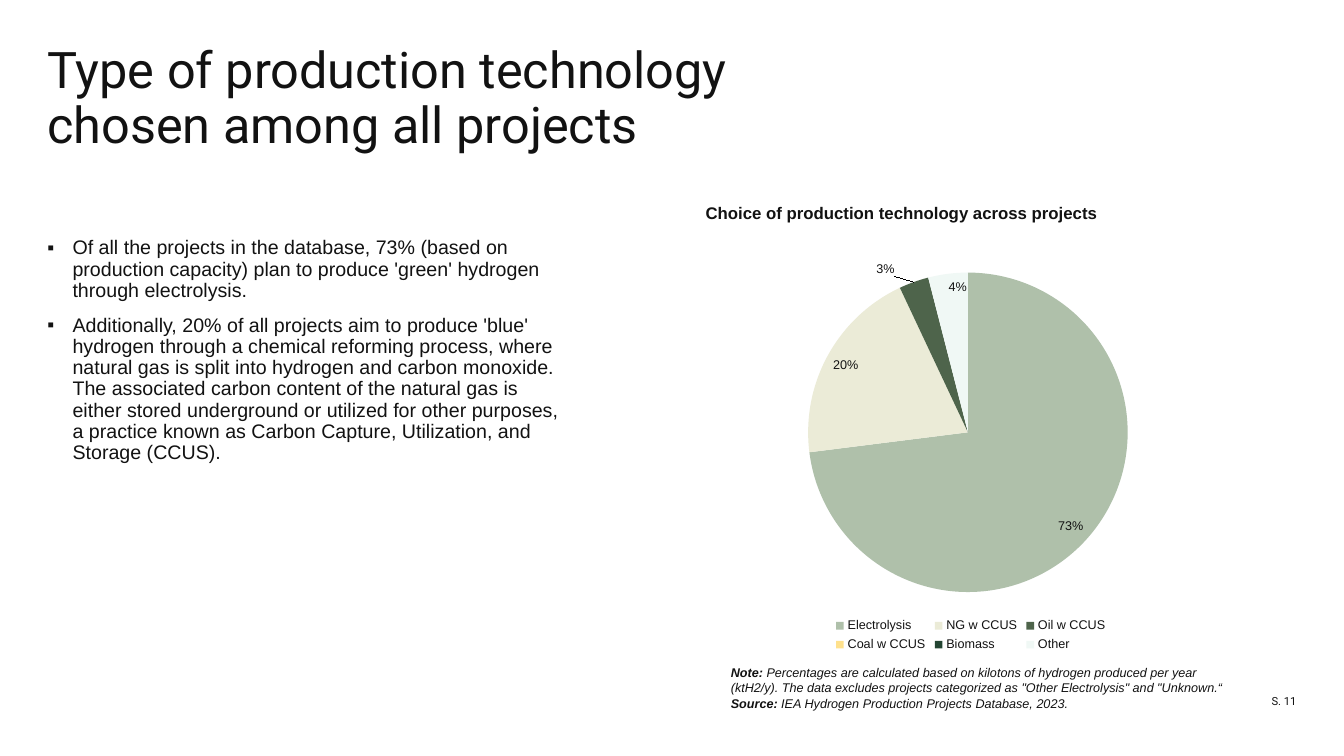
from dataclasses import dataclass

from lxml import etree
from pptx import Presentation
from pptx import util as u
from pptx.chart.data import CategoryChartData
from pptx.dml.color import RGBColor
from pptx.enum import chart as charts, text
from pptx.oxml import ns

INK = "121212"


@dataclass(frozen=True)
class Box:
    left: float
    top: float
    width: float
    height: float

    def lengths(self) -> list:
        return [u.Inches(v) for v in (self.left, self.top, self.width, self.height)]


@dataclass(frozen=True)
class Words:
    content: str
    bold: bool = False
    italic: bool = False


@dataclass(frozen=True)
class Slice:
    name: str
    share: float
    color: str
    position: charts.XL_LABEL_POSITION
    shift: tuple = ()


def rgb(code: str) -> RGBColor:
    return RGBColor.from_string(code)


def style(font, size: float, name: str = "Arial") -> None:
    font.size = u.Pt(size)
    font.name = name
    font.color.rgb = rgb(INK)


def write(paragraph, words: list, size: float, name: str = "Arial") -> None:
    for part in words:
        run = paragraph.add_run()
        run.text = part.content
        style(run.font, size, name)
        run.font.bold = part.bold
        run.font.italic = part.italic


def clear_margins(frame) -> None:
    frame.margin_left = frame.margin_top = frame.margin_right = frame.margin_bottom = 0


def add_text(slide, box: Box, paragraphs: list, size: float, name: str = "Arial"):
    frame = slide.shapes.add_textbox(*box.lengths()).text_frame
    frame.word_wrap = True
    for i, words in enumerate(paragraphs):
        paragraph = frame.add_paragraph() if i else frame.paragraphs[0]
        write(paragraph, words, size, name)
    return frame


def add_bullet(paragraph) -> None:
    props = paragraph._p.get_or_add_pPr()
    props.set("marL", str(u.Inches(0.25)))
    props.set("indent", str(-u.Inches(0.25)))
    font = etree.SubElement(props, ns.qn("a:buFont"))
    font.set("typeface", "Arial")
    etree.SubElement(props, ns.qn("a:buChar")).set("char", "▪")


def manual_layout(values: dict, modes: dict):
    layout = etree.Element(ns.qn("c:layout"))
    manual = etree.SubElement(layout, ns.qn("c:manualLayout"))
    for tag, value in {**modes, **values}.items():
        etree.SubElement(manual, ns.qn(f"c:{tag}")).set("val", str(value))
    return layout


def place(parent, values: dict, modes: dict, after: str = "") -> None:
    for old in parent.findall(ns.qn("c:layout")):
        parent.remove(old)
    layout = manual_layout(values, modes)
    if after:
        parent.find(ns.qn(after)).addnext(layout)
    else:
        parent.insert(0, layout)


def add_pie(slide, box: Box, slices: list) -> None:
    data = CategoryChartData(number_format="0%")
    data.categories = [s.name for s in slices]
    data.add_series("Series 1", [s.share for s in slices])
    pie = slide.shapes.add_chart(charts.XL_CHART_TYPE.PIE, *box.lengths(), data).chart
    pie.has_title = False
    style(pie.font, 10, "Roboto")
    pie.has_legend = True
    pie.legend.position = charts.XL_LEGEND_POSITION.BOTTOM
    pie.legend.include_in_layout = False
    style(pie.legend.font, 9)
    edges = {"xMode": "edge", "yMode": "edge"}
    place(pie.legend._element, {"x": 0.26, "y": 0.9, "w": 0.49, "h": 0.1},
          edges, "c:legendPos")
    place(pie._chartSpace.chart.plotArea, {"x": 0.22, "y": 0.08, "w": 0.56, "h": 0.77},
          {"layoutTarget": "inner", **edges})

    plot = pie.plots[0]
    plot.vary_by_categories = True
    plot.has_data_labels = True
    labels = plot.data_labels
    labels.show_value = True
    labels.show_percentage = False
    labels.number_format = "0%"
    labels.number_format_is_linked = False
    style(labels.font, 9)
    for point, part in zip(plot.series[0].points, slices):
        point.format.fill.solid()
        point.format.fill.fore_color.rgb = rgb(part.color)
        point.format.line.fill.background()
        style(point.data_label.font, 9)
        point.data_label.position = part.position
        if part.shift:
            label = point.data_label._dLbl
            place(label, dict(zip("xy", part.shift)), {}, "c:idx")


def main() -> None:
    deck = Presentation()
    deck.slide_width, deck.slide_height = u.Inches(13.33), u.Inches(7.5)
    slide = deck.slides.add_slide(deck.slide_layouts[5])

    title = slide.shapes.title
    title.left, title.top, title.width, title.height = Box(0.47, 0.47, 8.24, 1.06).lengths()
    heading = title.text_frame
    clear_margins(heading)
    heading.word_wrap = True
    heading.auto_size = text.MSO_AUTO_SIZE.NONE
    heading.vertical_anchor = text.MSO_ANCHOR.BOTTOM
    heading.paragraphs[0].alignment = text.PP_ALIGN.LEFT
    heading.paragraphs[0].line_spacing = 0.9
    write(heading.paragraphs[0],
          [Words("Type of production technology chosen among all projects")], 36, "Roboto")

    findings = add_text(slide, Box(0.47, 2.36, 5.2, 3.32), [
        [Words("Of all the projects in the database, 73% (based on production capacity) "
               "plan to produce 'green' hydrogen through electrolysis.")],
        [Words("Additionally, 20% of all projects aim to produce 'blue' hydrogen through "
               "a chemical reforming process, where natural gas is split into hydrogen and "
               "carbon monoxide. The associated carbon content of the natural gas is either "
               "stored underground or utilized for other purposes, a practice known as "
               "Carbon Capture, Utilization, and Storage (CCUS).")],
    ], 14)
    clear_margins(findings)
    for i, finding in enumerate(findings.paragraphs):
        add_bullet(finding)
        finding.line_spacing = 0.9
        if i:
            finding.space_before = u.Pt(10)

    page = add_text(slide, Box(11.83, 6.63, 1.03, 0.39), [[Words("S. 11")]], 8, "Roboto")
    clear_margins(page)
    page.vertical_anchor = text.MSO_ANCHOR.BOTTOM
    page.paragraphs[0].alignment = text.PP_ALIGN.RIGHT

    inside = charts.XL_LABEL_POSITION.INSIDE_END
    outside = charts.XL_LABEL_POSITION.OUTSIDE_END
    add_pie(slide, Box(6.77, 2.36, 5.66, 4.15), [
        Slice("Electrolysis", 0.73, "AFC0AA", inside),
        Slice("NG w CCUS", 0.2, "EBEBD7", inside),
        Slice("Oil w CCUS", 0.03, "4E644B", outside, (-0.03, 0)),
        Slice("Coal w CCUS", 0, "FFE18C", outside, (-0.02, -0.01)),
        Slice("Biomass", 0, "234432", outside, (0.02, -0.01)),
        Slice("Other", 0.04, "F0F8F5", inside),
    ])

    add_text(slide, Box(7.15, 6.55, 5.28, 0.56), [
        [Words("Note:", True, True),
         Words(" Percentages are calculated based on kilotons of hydrogen produced per year "
               "(ktH2/y). The data excludes projects categorized as \"Other Electrolysis\" "
               "and \"Unknown.“", italic=True)],
        [Words("Source:", True, True),
         Words(" IEA Hydrogen Production Projects Database, 2023.", italic=True)],
    ], 9)
    add_text(slide, Box(6.9, 1.96, 6.66, 0.3),
             [[Words("Choice of production technology across projects", True)]], 12)
    deck.save("out.pptx")


if __name__ == "__main__":
    main()
